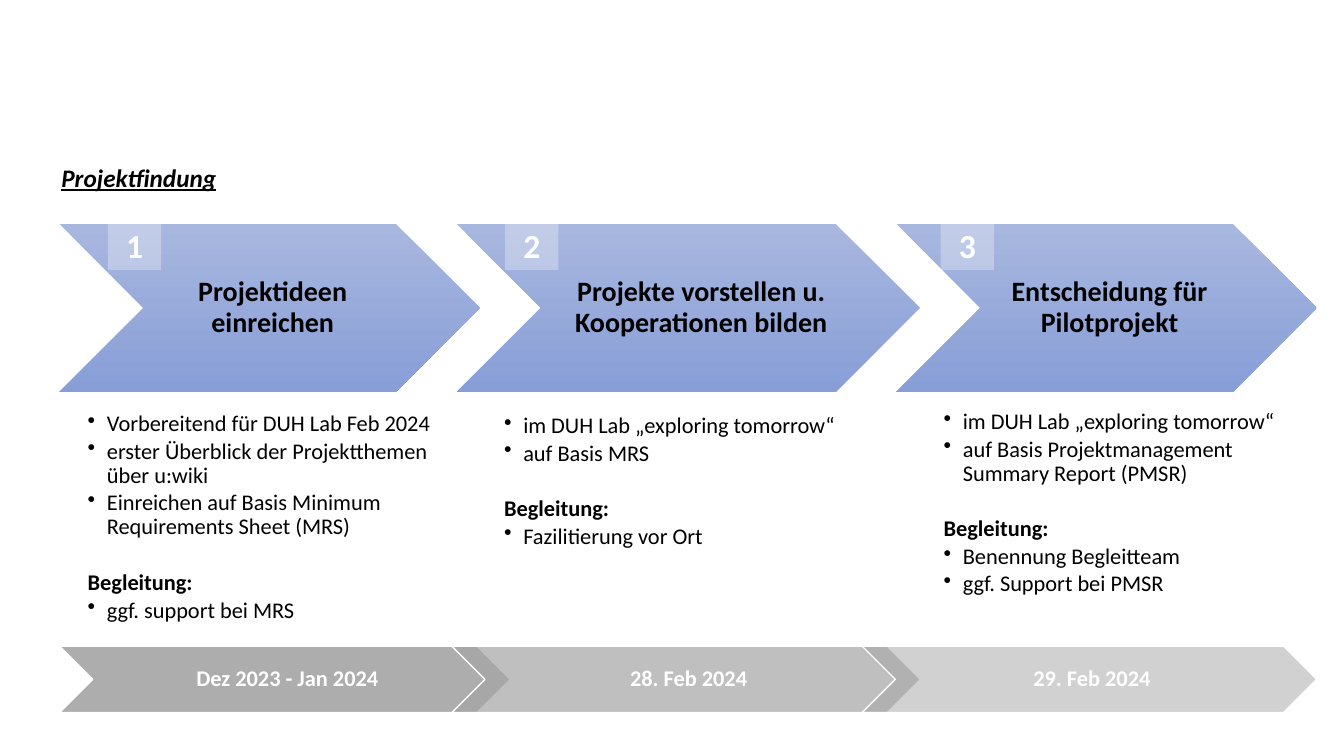
from dataclasses import dataclass
from typing import Any, NamedTuple

from lxml import etree
from pptx import Presentation
from pptx import slide as slides
from pptx import util as u
from pptx.dml import color, fill as fills
from pptx.enum import shapes, text
from pptx.oxml import ns
from pptx.shapes import autoshape
from pptx.text import text as texts


@dataclass(frozen=True)
class Theme:
    font: str = "Calibri"
    black: str = "000000"
    white: str = "FFFFFF"
    grey: str = "A5A5A5"
    blue_top: str = "A8B7DF"
    blue_bottom: str = "889ED7"
    body_size: int = 16
    heading_size: int = 18
    title_size: int = 20
    badge_size: int = 24


class Box(NamedTuple):
    left: float
    top: float
    width: float
    height: float

    def lengths(self) -> list[u.Length]:
        return [u.Inches(value) for value in self]

    def between_points(self) -> "Box":
        return Box(self.left + self.height / 2, self.top, self.width - self.height, self.height)


@dataclass(frozen=True)
class Phase:
    number: str
    title: str
    arrow: Box
    badge_left: float
    details: Box
    tasks: tuple[str, ...]
    support: tuple[str, ...]
    date: str
    date_arrow: Box
    date_opacity: int
    title_indent: float = 0


THEME = Theme()
SUPPORT_HEADING = "Begleitung:"
PHASES = (
    Phase("1", "Projektideen einreichen", Box(0.59, 2.22, 4.17, 1.67), 1.07,
          Box(0.87, 4.09, 3.49, 2.16),
          ("Vorbereitend für DUH Lab Feb 2024",
           "erster Überblick der Projektthemen über u:wiki",
           "Einreichen auf Basis Minimum Requirements Sheet (MRS)"),
          ("ggf. support bei MRS",),
          "Dez 2023 - Jan 2024", Box(0.59, 6.41, 4.47, 0.66), 90),
    Phase("2", "Projekte vorstellen u. Kooperationen bilden", Box(4.53, 2.22, 4.59, 1.67), 5.01,
          Box(5, 4.11, 3.34, 2.16),
          ("im DUH Lab „exploring tomorrow“", "auf Basis MRS"),
          ("Fazilitierung vor Ort",),
          "28. Feb 2024", Box(4.48, 6.41, 4.65, 0.66), 70, 0.2),
    Phase("3", "Entscheidung für Pilotprojekt", Box(8.89, 2.22, 4.17, 1.67), 9.33,
          Box(9.36, 4.07, 3.34, 2.16),
          ("im DUH Lab „exploring tomorrow“",
           "auf Basis Projektmanagement Summary Report (PMSR)"),
          ("Benennung Begleitteam", "ggf. Support bei PMSR"),
          "29. Feb 2024", Box(8.55, 6.41, 4.51, 0.66), 50),
)


def apply_format(target: Any, values: dict[str, Any]) -> None:
    for name, value in values.items():
        setattr(target, name, value)


def write_run(paragraph: texts._Paragraph, content: str, size: int, rgb: str, **style: bool) -> None:
    run = paragraph.add_run()
    run.text = content
    apply_format(run.font, {"name": THEME.font, "size": u.Pt(size), **style})
    run.font.color.rgb = color.RGBColor.from_string(rgb)


def indent(paragraph: texts._Paragraph, left: float, first_line: float = 0) -> None:
    properties = paragraph._p.get_or_add_pPr()
    properties.set("marL", str(u.Inches(left)))
    properties.set("indent", str(u.Inches(first_line)))


def fill_solid(fill: fills.FillFormat, rgb: str, opacity: int) -> None:
    fill.solid()
    fill.fore_color.rgb = color.RGBColor.from_string(rgb)
    element = fill._xPr.find(f".//{ns.qn('a:srgbClr')}")
    etree.SubElement(element, ns.qn("a:alpha"), val=str(opacity * 1000))


def fill_gradient(fill: fills.FillFormat) -> None:
    fill.gradient()
    fill.gradient_angle = 270
    for stop, position, rgb in zip(fill.gradient_stops, (0, 1), (THEME.blue_top, THEME.blue_bottom)):
        stop.position = position
        stop.color.rgb = color.RGBColor.from_string(rgb)


def add_plain_shape(slide: slides.Slide, kind: shapes.MSO_SHAPE, box: Box) -> autoshape.Shape:
    shape = slide.shapes.add_shape(kind, *box.lengths())
    shape.shadow.inherit = False
    shape.line.fill.background()
    return shape


def add_text_box(slide: slides.Slide, box: Box, left_inset: float, inset: float) -> texts.TextFrame:
    frame = slide.shapes.add_textbox(*box.lengths()).text_frame
    apply_format(frame, {
        "word_wrap": True,
        "margin_left": u.Inches(left_inset),
        "margin_top": u.Inches(inset),
        "margin_right": u.Inches(inset),
        "margin_bottom": u.Inches(inset),
    })
    return frame


def add_centred_label(slide: slides.Slide, box: Box, content: str, size: int, rgb: str,
                      left_inset: float, inset: float, left_indent: float = 0) -> None:
    frame = add_text_box(slide, box, left_inset, inset)
    frame.vertical_anchor = text.MSO_ANCHOR.MIDDLE
    paragraph = frame.paragraphs[0]
    apply_format(paragraph, {"alignment": text.PP_ALIGN.CENTER, "line_spacing": 0.9})
    indent(paragraph, left_indent)
    write_run(paragraph, content, size, rgb, bold=True)


def add_details(slide: slides.Slide, phase: Phase) -> None:
    frame = add_text_box(slide, phase.details, 0, 0)
    for index, line in enumerate((*phase.tasks, SUPPORT_HEADING, *phase.support)):
        is_heading = line == SUPPORT_HEADING
        paragraph = frame.add_paragraph() if index else frame.paragraphs[0]
        apply_format(paragraph, {
            "level": 1,
            "line_spacing": 0.9,
            "space_before": u.Pt(20 if is_heading else 0),
            "space_after": u.Pt(2.4),
        })
        indent(paragraph, 0.19, -0.19)
        if not is_heading:
            etree.SubElement(paragraph._p.get_or_add_pPr(), ns.qn("a:buChar"), char="•")
        write_run(paragraph, line, THEME.body_size, THEME.black, bold=is_heading)


def add_phase(slide: slides.Slide, phase: Phase) -> None:
    arrow = add_plain_shape(slide, shapes.MSO_SHAPE.CHEVRON, phase.arrow)
    fill_gradient(arrow.fill)
    add_centred_label(slide, phase.arrow.between_points(), phase.title, THEME.title_size,
                      THEME.black, 0.09, 0.03, phase.title_indent)
    add_details(slide, phase)


def add_heading(slide: slides.Slide) -> None:
    frame = add_text_box(slide, Box(0.51, 1.56, 1.83, 0.4), 0.1, 0.05)
    apply_format(frame, {"word_wrap": False, "auto_size": text.MSO_AUTO_SIZE.SHAPE_TO_FIT_TEXT})
    write_run(frame.paragraphs[0], "Projektfindung", THEME.heading_size, THEME.black,
              bold=True, italic=True, underline=True)


def add_date(slide: slides.Slide, phase: Phase) -> None:
    arrow = add_plain_shape(slide, shapes.MSO_SHAPE.CHEVRON, phase.date_arrow)
    fill_solid(arrow.fill, THEME.grey, phase.date_opacity)
    arrow.line.color.rgb = color.RGBColor.from_string(THEME.white)
    arrow.line.width = u.Pt(1)
    add_centred_label(slide, phase.date_arrow.between_points(), phase.date, THEME.body_size,
                      THEME.white, 0.07, 0.02)


def add_badge(slide: slides.Slide, phase: Phase) -> None:
    badge = add_plain_shape(slide, shapes.MSO_SHAPE.RECTANGLE, Box(phase.badge_left, 2.18, 0.53, 0.5))
    fill_solid(badge.fill, THEME.white, 30)
    apply_format(badge.text_frame, {
        "vertical_anchor": text.MSO_ANCHOR.MIDDLE,
        "word_wrap": True,
        "auto_size": text.MSO_AUTO_SIZE.SHAPE_TO_FIT_TEXT,
    })
    paragraph = badge.text_frame.paragraphs[0]
    paragraph.alignment = text.PP_ALIGN.CENTER
    write_run(paragraph, phase.number, THEME.badge_size, THEME.white, bold=True)


def main() -> None:
    presentation = Presentation()
    apply_format(presentation, {"slide_width": u.Inches(13.33), "slide_height": u.Inches(7.5)})
    slide = presentation.slides.add_slide(presentation.slide_layouts[6])
    for phase in PHASES:
        add_phase(slide, phase)
    add_heading(slide)
    for add_part in (add_date, add_badge):
        for phase in PHASES:
            add_part(slide, phase)
    presentation.save("out.pptx")


if __name__ == "__main__":
    main()
